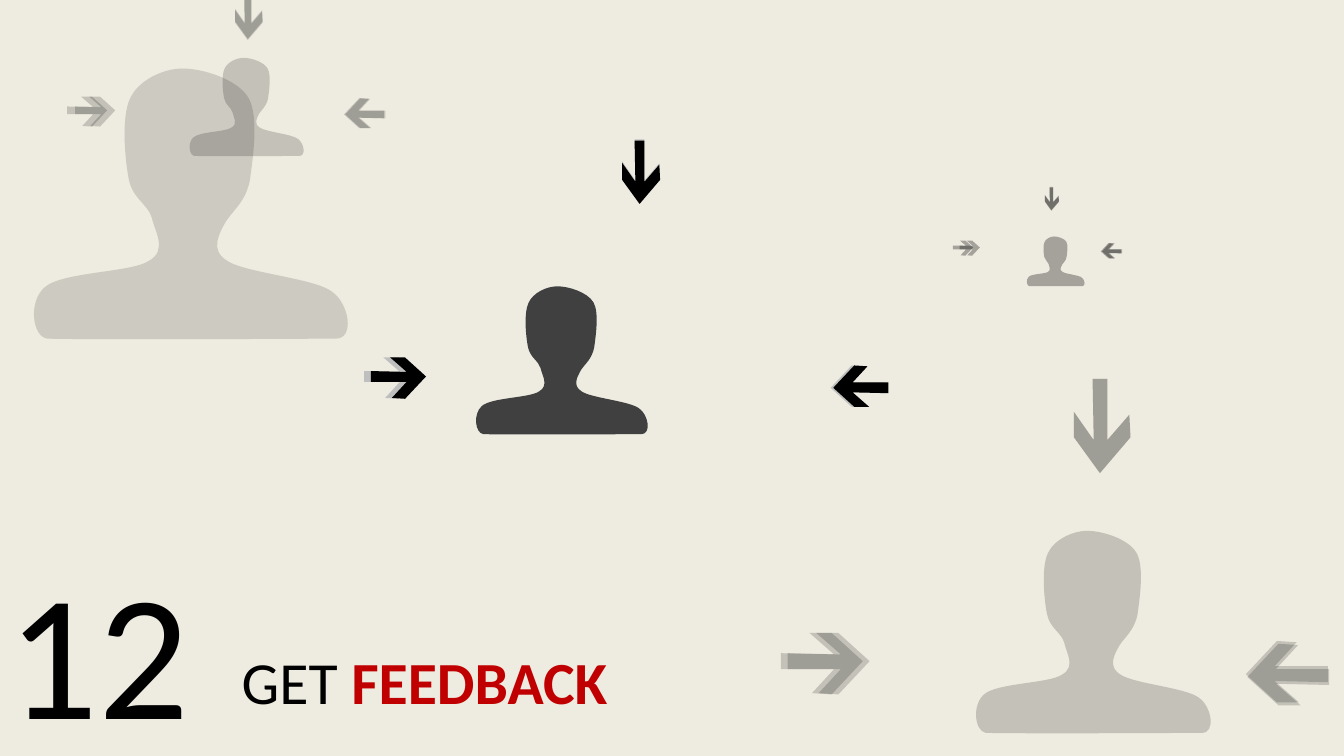
"""Build the "Get feedback" slide: people, each with arrows pointing at them."""
from lxml import etree
from pptx import Presentation
from pptx.dml.color import RGBColor
from pptx.enum.text import MSO_ANCHOR, MSO_AUTO_SIZE
from pptx.oxml.ns import qn
from pptx.util import Pt

TOP = MSO_ANCHOR.TOP
FIT_SHAPE = MSO_AUTO_SIZE.SHAPE_TO_FIT_TEXT

THEME = {
    "font": "Calibri",
    "number": 96,
    "title": 32,
    "paper": "EEECE1",
    "ink": "000000",
    "accent": "C00000",
    "person": "404040",
    "echo": "BFBFBF",
}

PERSON_W, PERSON_H = 234, 202
PERSON_CURVES = [
    [(86, 143)],
    [(100, 135), (90, 121), (88, 111)],
    [(85, 101), (74, 97), (71, 83)],
    [(68, 68), (65, 36), (72, 22)],
    [(78, 9), (96, 0), (111, 0)],
    [(126, 0), (152, 8), (160, 22)],
    [(168, 36), (163, 68), (161, 83)],
    [(158, 99), (148, 106), (143, 114)],
    [(138, 123), (131, 135), (144, 143)],
    [(157, 152), (209, 156), (222, 166)],
    [(235, 175), (239, 201), (225, 201)],
    [(211, 201), (53, 202), (10, 201)],
    [(-1, 199), (-4, 174), (8, 163)],
    [(21, 151), (73, 152), (86, 143)],
]
FRAME = [(0, 0), (1, 0), (1, 1), (0, 1)]
ARROW = [
    (0, 0.33), (0.65, 0.35), (0.35, 0), (0.62, 0), (1, 0.46),
    (0.62, 1), (0.38, 0.98), (0.65, 0.59), (0, 0.59),
]


def add_outline(s, outline, x, y, w, h, color, alpha=100, rotation=0, flip=False):
    points = [(Pt(x + px * w), Pt(y + py * h)) for px, py in outline]
    builder = s.shapes.build_freeform(*points[0])
    builder.add_line_segments(points[1:], close=True)
    sp = builder.convert_to_shape()
    sp.shadow.inherit = False
    sp.line.fill.background()
    sp.fill.solid()
    sp.fill.fore_color.rgb = RGBColor.from_string(color)
    sp.rotation = rotation
    if flip:
        sp._element.spPr.find(qn("a:xfrm")).set("flipH", "1")
    if alpha < 100:
        clr = sp._element.spPr.find(qn("a:solidFill")).find(qn("a:srgbClr"))
        etree.SubElement(clr, qn("a:alpha")).set("val", str(alpha * 1000))
    return sp


def add_run(p, text, size, color, bold=False):
    r = p.add_run()
    r.text = text
    r.font.name = THEME["font"]
    r.font.size = Pt(size)
    r.font.bold = bold
    r.font.color.rgb = RGBColor.from_string(color)


prs = Presentation()
prs.slide_width, prs.slide_height = Pt(720), Pt(405)
s = prs.slides.add_slide(prs.slide_layouts[6])
s.background.fill.solid()
s.background.fill.fore_color.rgb = RGBColor.from_string(THEME["paper"])

captions = [
    ((-2.9, 285.8, 125.3, 123.8), [("12", THEME["number"], THEME["ink"], False)]),
    ((122.4, 342, 219.6, 46.1), [
        ("GET ", THEME["title"], THEME["ink"], False),
        ("FEEDBACK", THEME["title"], THEME["accent"], True),
    ]),
]
for box, runs in captions:
    tf = s.shapes.add_textbox(*map(Pt, box)).text_frame
    tf.word_wrap = False
    tf.auto_size = FIT_SHAPE
    tf.vertical_anchor = TOP
    for text, size, color, bold in runs:
        add_run(tf.paragraphs[0], text, size=size, color=color, bold=bold)

ink = THEME["ink"]
scenes = [
    {"person": (254.9, 153.4, 92.2), "color": THEME["person"], "alpha": 100,
     "arrow": 29.5, "arrow_colors": (THEME["echo"], ink),
     "right": [(195.1, 191.5), (198.7, 191.5)],
     "down": [(326.5, 81.4), (326.5, 82.1)],
     "left": [(445, 195.8), (446.4, 195.8)]},
    {"person": (522.7, 284.4, 126), "color": ink, "alpha": 18,
     "arrow": 43.9, "arrow_colors": (ink, ink),
     "right": [(418.3, 339.1), (421.9, 339.1)],
     "down": [(565.2, 213.1), (565.2, 213.1)],
     "left": [(667.4, 343.4), (668.2, 344.9)]},
    {"person": (101.5, 31, 61.2), "color": ink, "alpha": 18,
     "arrow": 21.4, "arrow_colors": (ink, ink),
     "right": [(36, 51.8), (40.3, 51.8)],
     "down": [(121, 1.8), (121, 1.1)],
     "left": [(184.3, 52.6), (185, 52.6)]},
    {"person": (18, 36.7, 168.5), "color": ink, "alpha": 14},
    {"person": (550.1, 126.7, 31), "color": ink, "alpha": 31,
     "arrow": 10.8, "arrow_colors": (ink, ink),
     "right": [(510.5, 128.9), (514.1, 128.9)],
     "down": [(557.3, 103), (557.3, 102.6)],
     "left": [(589.7, 130.3), (590.4, 130.3)]},
]
directions = [
    ("right", 1, 0.75, 0, False),
    ("down", 1.15, 0.69, 270, True),
    ("left", 1, 0.75, 180, False),
]
for scene in scenes:
    x, y, w = scene["person"]
    alpha = scene["alpha"]
    sp = add_outline(s, FRAME, x, y, w, w * PERSON_H / PERSON_W, scene["color"], alpha)
    contour = next(sp._element.spPr.iter(qn("a:path")))
    contour.clear()
    contour.set("w", str(PERSON_W))
    contour.set("h", str(PERSON_H))
    for curve in PERSON_CURVES:
        tag = "a:cubicBezTo" if len(curve) == 3 else "a:moveTo"
        segment = etree.SubElement(contour, qn(tag))
        for px, py in curve:
            etree.SubElement(segment, qn("a:pt"), x=str(px), y=str(py))
    etree.SubElement(contour, qn("a:close"))
    for name, length, breadth, rotation, flip in directions:
        for (x, y), color in zip(scene.get(name, []), scene.get("arrow_colors", [])):
            add_outline(s, ARROW, x, y, scene["arrow"] * length,
                        scene["arrow"] * breadth, color, alpha, rotation, flip)

prs.save("out.pptx")
